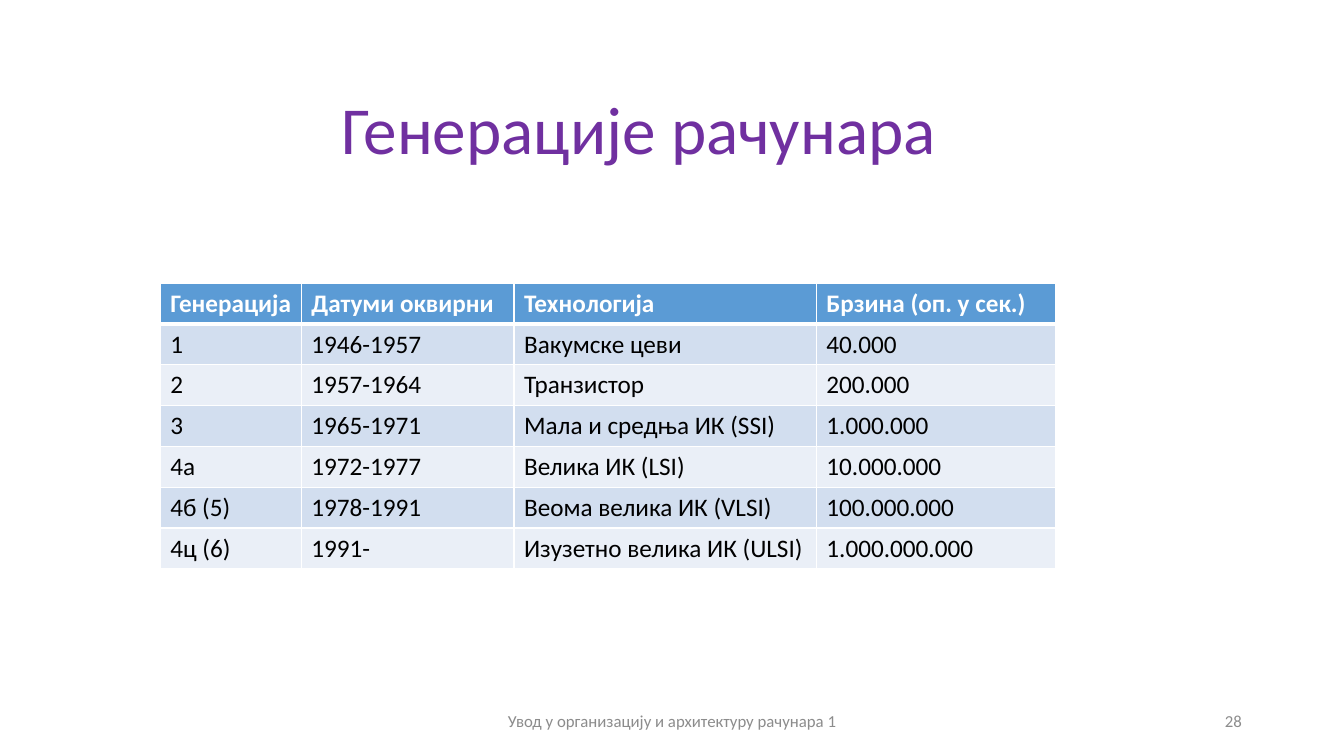
from pptx import Presentation
from pptx.dml.color import RGBColor
from pptx.enum.text import MSO_ANCHOR as ANCHOR, PP_ALIGN as ALIGN
from pptx.oxml import parse_xml
from pptx.oxml.ns import nsdecls
from pptx.util import Pt

EMU_PER_PX = 4572  # 200 px to the inch
PURPLE, GRAY, WHITE, BLACK = "7030A0", "8C8C8C", "FFFFFF", "000000"
HEADER_FILL, BAND_FILLS = "5B9BD5", ("D2DEEF", "EAEFF7")

COLUMN_WIDTHS = (280, 422, 600, 474)
ROW_HEIGHT = 81
GENERATIONS = (
    ("Генерација", "Датуми оквирни", "Технологија", "Брзина (оп. у сек.)"),
    ("1", "1946-1957", "Вакумске цеви", "40.000"),
    ("2", "1957-1964", "Транзистор", "200.000"),
    ("3", "1965-1971", "Мала и средња ИК (SSI)", "1.000.000"),
    ("4а", "1972-1977", "Велика ИК (LSI)", "10.000.000"),
    ("4б (5)", "1978-1991", "Веома велика ИК (VLSI)", "100.000.000"),
    ("4ц (6)", "1991-", "Изузетно велика ИК (ULSI)", "1.000.000.000"),
)


def px(*lengths):
    return [n * EMU_PER_PX for n in lengths]


def rgb(color):
    return RGBColor.from_string(color)


class SlideBuilder:
    font_name = "Calibri"

    def __init__(self, prs):
        self.slide = prs.slides.add_slide(prs.slide_layouts[6])

    def style(self, p, size, color, bold=False):
        for r in p.runs:
            r.font.name = self.font_name
            r.font.size = Pt(size)
            r.font.bold = bold
            r.font.color.rgb = rgb(color)

    def text(self, box, text, size, color, align):
        sp = self.slide.shapes.add_textbox(*px(*box))
        tf = sp.text_frame
        tf.word_wrap = True
        tf.vertical_anchor = ANCHOR.MIDDLE
        tf.text = text
        p = tf.paragraphs[0]
        p.alignment = align
        self.style(p, size, color)
        return p

    def text_shadow(self, p):
        effects = parse_xml(
            f'<a:effectLst {nsdecls("a")}>'
            '<a:outerShdw blurRad="38100" dist="38100" dir="2700000" algn="tl">'
            '<a:srgbClr val="000000"><a:alpha val="43000"/></a:srgbClr>'
            '</a:outerShdw></a:effectLst>')
        fill = p.runs[0].font._element.find(
            "{http://schemas.openxmlformats.org/drawingml/2006/main}solidFill")
        fill.addnext(effects)

    def borders(self, cell, widths):
        tc_pr = cell._tc.get_or_add_tcPr()
        for side, width in zip("LRTB", widths):
            tc_pr.append(parse_xml(
                f'<a:ln{side} {nsdecls("a")} w="{Pt(width)}"><a:solidFill>'
                f'<a:srgbClr val="{WHITE}"/></a:solidFill></a:ln{side}>'))

    def table(self, left, top, rows, widths, row_height):
        box = px(left, top, sum(widths), row_height * len(rows))
        table = self.slide.shapes.add_table(len(rows), len(widths), *box).table
        table.first_row = table.horz_banding = False
        for column, width in zip(table.columns, px(*widths)):
            column.width = width
        for i, row in enumerate(rows):
            table.rows[i].height = px(row_height)[0]
            header = i == 0
            for j, text in enumerate(row):
                cell = table.cell(i, j)
                cell.text = text
                self.style(cell.text_frame.paragraphs[0], 18,
                           WHITE if header else BLACK, header)
                # The rule under the header is thicker
                self.borders(cell, (1, 1, 3 if i == 1 else 1, 3 if header else 1))
                cell.fill.solid()
                cell.fill.fore_color.rgb = rgb(
                    HEADER_FILL if header else BAND_FILLS[(i - 1) % 2])


def main():
    prs = Presentation()
    prs.slide_width, prs.slide_height = px(2667, 1500)
    s = SlideBuilder(prs)

    # Title
    title = s.text((442, 106, 1652, 314), "Генерације рачунара",
                   48, PURPLE, ALIGN.CENTER)
    title.line_spacing = 0.9
    s.text_shadow(title)

    # Footer and slide number
    s.text((884, 1390, 900, 80), "Увод у организацију и архитектуру рачунара 1",
           12, GRAY, ALIGN.CENTER)
    s.text((1884, 1390, 600, 80), "28", 12, GRAY, ALIGN.RIGHT)

    # Computer generations
    s.table(318, 562, GENERATIONS, COLUMN_WIDTHS, ROW_HEIGHT)

    prs.save("out.pptx")


if __name__ == "__main__":
    main()
